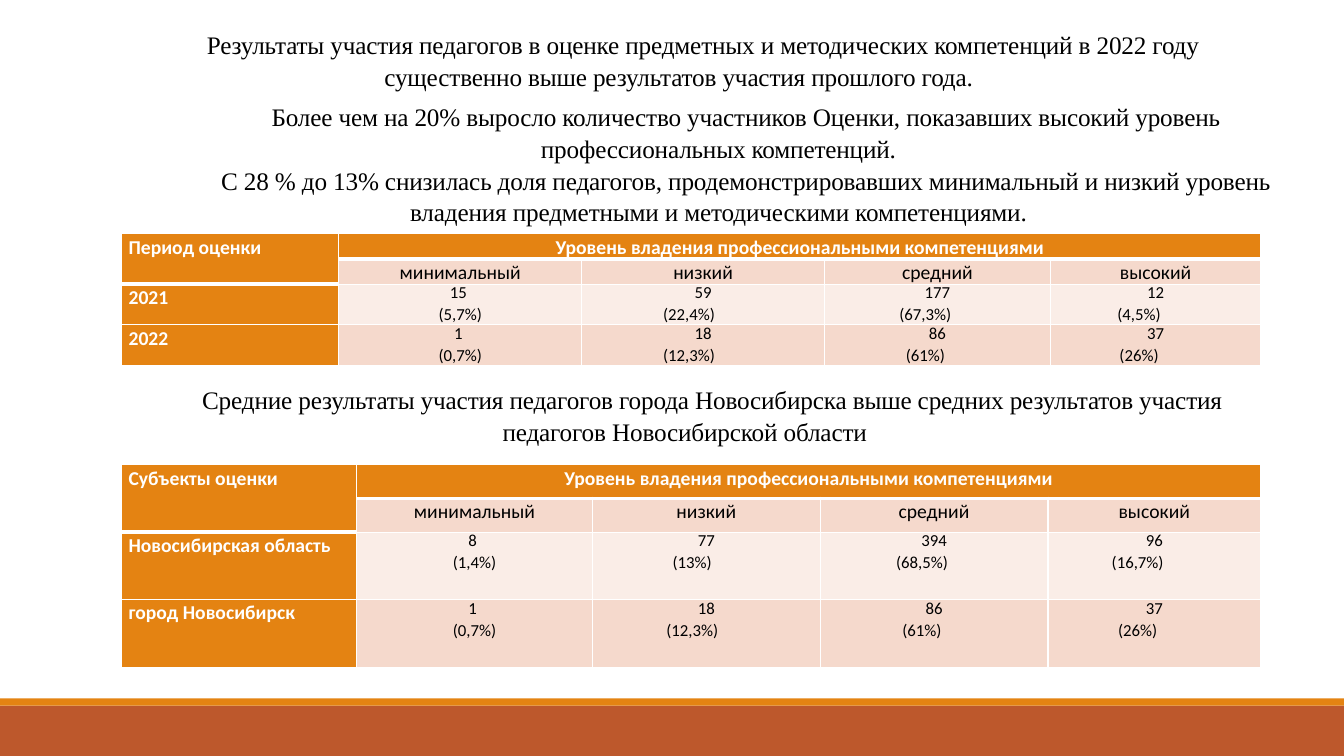
from lxml import etree
from pptx import Presentation
from pptx.dml.color import RGBColor
from pptx.enum.shapes import MSO_SHAPE
from pptx.enum.text import PP_ALIGN
from pptx.oxml.ns import qn
from pptx.util import Cm, Pt

ORANGE = RGBColor(0xE4, 0x83, 0x12)
RUST = RGBColor(0xBD, 0x58, 0x2C)
PEACH = RGBColor(0xF5, 0xD9, 0xCC)
PALE = RGBColor(0xFA, 0xED, 0xE7)
WHITE = RGBColor(0xFF, 0xFF, 0xFF)
BLACK = RGBColor(0, 0, 0)

STATEMENT = {"name": "Times New Roman", "size": Pt(18)}
HEADING = {"name": "Calibri", "size": Pt(14), "bold": True}
LEVEL = {"name": "Calibri", "size": Pt(14), "bold": False}
FIGURE = {"name": "Calibri", "size": Pt(12), "bold": False}

LEVELS = ["минимальный", "низкий", "средний", "высокий"]
COUNT_INDENTS = [Cm(0), Cm(0.71), Cm(0.61), Cm(0.84)]
TABLE_LEFT = Cm(3.05)
CELL_SPACING = 1.07
COUNT_SPACING = Pt(13.6)


def add_band(slide, top, height, color):
    band = slide.shapes.add_shape(MSO_SHAPE.RECTANGLE, 0, top, Cm(33.87), height)
    band.shadow.inherit = False
    band.fill.solid()
    band.fill.fore_color.rgb = color
    band.line.fill.background()


def write(paragraph, text, style, color, align, spacing):
    paragraph.alignment = align
    paragraph.line_spacing = spacing
    run = paragraph.add_run()
    run.text = text
    for attribute, value in style.items():
        setattr(run.font, attribute, value)
    run.font.color.rgb = color
    return run


def add_statements(slide, left, top, width, height, statements):
    """Centred text whose every paragraph starts with an indented line."""
    frame = slide.shapes.add_textbox(left, top, width, height).text_frame
    frame.word_wrap = True
    for index, statement in enumerate(statements):
        paragraph = frame.add_paragraph() if index else frame.paragraphs[0]
        paragraph.space_before = Pt(0.1)
        run = write(paragraph, statement, STATEMENT, BLACK, PP_ALIGN.CENTER, 1.05)
        properties = paragraph._p.get_or_add_pPr()
        properties.set("marL", str(Cm(0.18)))
        properties.set("indent", str(Cm(1.22)))
        run._r.get_or_add_rPr().set("spc", "-10")


def set_borders(cell, top, bottom):
    """White borders: 1 pt at the sides, given point widths above and below."""
    properties = cell._tc.get_or_add_tcPr()
    for side, width in {"L": 1, "R": 1, "T": top, "B": bottom}.items():
        line = etree.SubElement(properties, qn(f"a:ln{side}"), w=str(Pt(width)))
        fill = etree.SubElement(line, qn("a:solidFill"))
        etree.SubElement(fill, qn("a:srgbClr"), val=str(WHITE))


def format_cell(cell, row, column):
    header_bottom = 1 if column == 0 else 0
    set_borders(cell, 3 if row == header_bottom + 1 else 1,
                3 if row == header_bottom else 1)
    margins = {"margin_left": Cm(0.19), "margin_right": Cm(0.19),
               "margin_top": 0, "margin_bottom": 0}
    for attribute, value in margins.items():
        setattr(cell, attribute, value)
    cell.fill.solid()
    if row == 0 or column == 0:
        cell.fill.fore_color.rgb = ORANGE
    else:
        cell.fill.fore_color.rgb = PALE if row == 2 else PEACH


def write_result(cell, count, share, indent):
    """Count above its share; both keep the right margin, only the count the left."""
    frame = cell.text_frame
    count_line, share_line = frame.paragraphs[0], frame.add_paragraph()
    write(count_line, count, FIGURE, BLACK, PP_ALIGN.CENTER, COUNT_SPACING)
    write(share_line, f"({share})", FIGURE, BLACK, PP_ALIGN.CENTER, CELL_SPACING)
    count_line._p.get_or_add_pPr().set("marL", str(indent))
    for line in (count_line, share_line):
        line._p.get_or_add_pPr().set("marR", str(indent))


def add_results_table(slide, top, widths, heights, subject, results):
    table = slide.shapes.add_table(len(heights), len(widths), TABLE_LEFT, top,
                                   Cm(sum(widths)), Cm(sum(heights))).table
    for column, width in zip(table.columns, widths):
        column.width = Cm(width)
    for row, height in zip(table.rows, heights):
        row.height = Cm(height)
    for row in range(len(heights)):
        for column in range(len(widths)):
            format_cell(table.cell(row, column), row, column)
    table.cell(0, 0).merge(table.cell(1, 0))
    table.cell(0, 1).merge(table.cell(0, len(LEVELS)))

    def write_cell(row, column, text, style, color, align):
        paragraph = table.cell(row, column).text_frame.paragraphs[0]
        write(paragraph, text, style, color, align, CELL_SPACING)

    write_cell(0, 0, subject, HEADING, WHITE, PP_ALIGN.JUSTIFY)
    write_cell(0, 1, "Уровень владения профессиональными компетенциями",
               HEADING, WHITE, PP_ALIGN.CENTER)
    for column, level in enumerate(LEVELS, 1):
        write_cell(1, column, level, LEVEL, BLACK, PP_ALIGN.CENTER)
    for row, (label, pairs) in enumerate(results.items(), 2):
        write_cell(row, 0, label, HEADING, WHITE, PP_ALIGN.JUSTIFY)
        for column, ((count, share), indent) in enumerate(zip(pairs, COUNT_INDENTS), 1):
            write_result(table.cell(row, column), count, share, indent)


def main():
    presentation = Presentation()
    presentation.slide_width = Cm(33.87)
    presentation.slide_height = Cm(19.05)
    slide = presentation.slides.add_slide(presentation.slide_layouts[6])

    add_band(slide, Cm(17.78), Cm(1.27), RUST)
    add_band(slide, Cm(17.6), Cm(0.18), ORANGE)

    add_statements(slide, Cm(2.46), Cm(0.58), Cm(29.11), Cm(1.8), [
        "Результаты участия педагогов в оценке предметных и методических компетенций "
        "в 2022 году существенно выше результатов участия прошлого года."])
    add_statements(slide, Cm(2.69), Cm(2.39), Cm(30.81), Cm(3.33), [
        "Более чем на 20% выросло количество участников Оценки, показавших высокий "
        "уровень профессиональных компетенций. ",
        "С 28 % до 13% снизилась доля педагогов, продемонстрировавших минимальный и "
        "низкий уровень владения предметными и методическими компетенциями. "])
    add_statements(slide, Cm(2.69), Cm(9.53), Cm(29.11), Cm(1.8), [
        "Средние результаты участия педагогов города Новосибирска выше средних "
        "результатов участия педагогов Новосибирской области "])

    city_2022 = [("1 ", "0,7%"), ("18", "12,3%"), ("86", "61%"), ("37", "26%")]
    add_results_table(
        slide, Cm(5.89), [5.49, 6.12, 6.12, 5.69, 5.31], [0.6, 0.6, 1.02, 1.02],
        "Период оценки",
        {"2021": [("15 ", "5,7%"), ("59", "22,4%"), ("177", "67,3%"), ("12", "4,5%")],
         "2022": city_2022})
    add_results_table(
        slide, Cm(11.71), [5.94, 5.94, 5.74, 5.74, 5.36], [0.85, 0.85, 1.7, 1.7],
        "Субъекты оценки",
        {"Новосибирская область": [("8 ", "1,4%"), ("77", "13%"),
                                   ("394", "68,5%"), ("96", "16,7%")],
         "город Новосибирск": city_2022})

    presentation.save("out.pptx")


if __name__ == "__main__":
    main()
